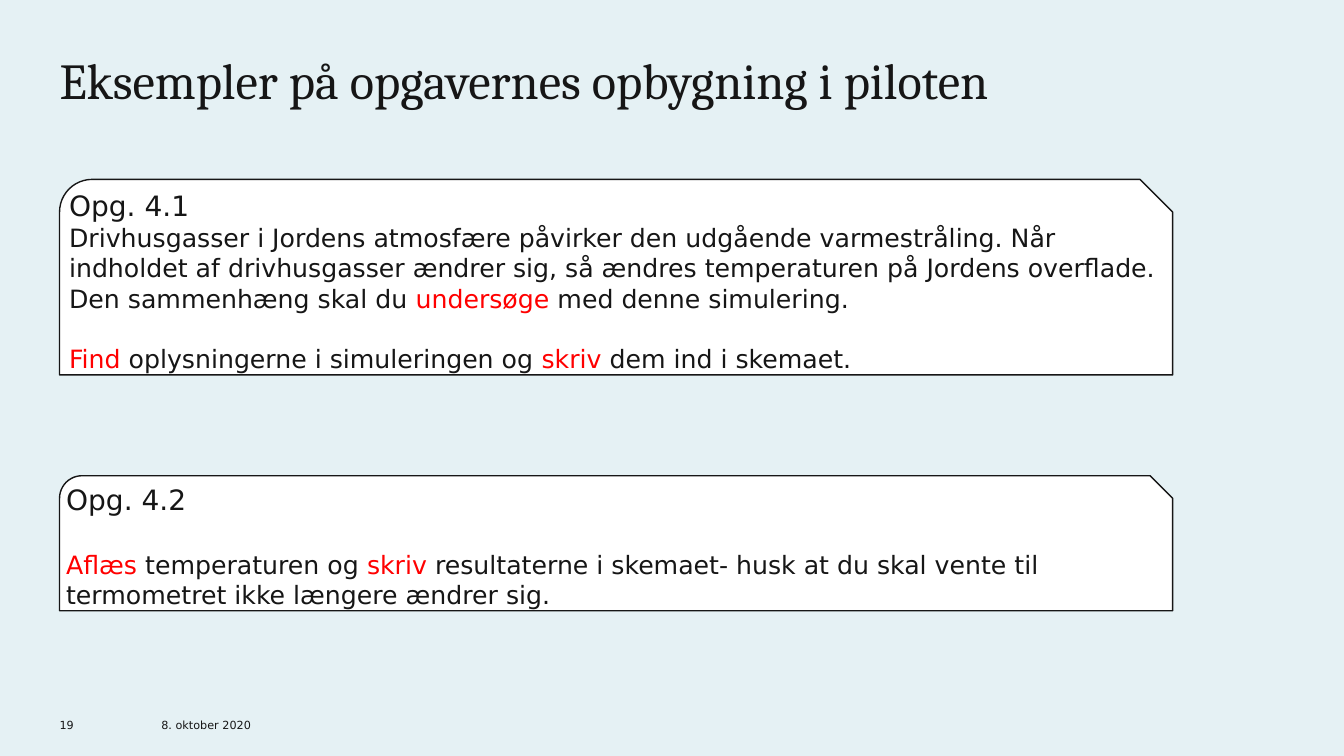
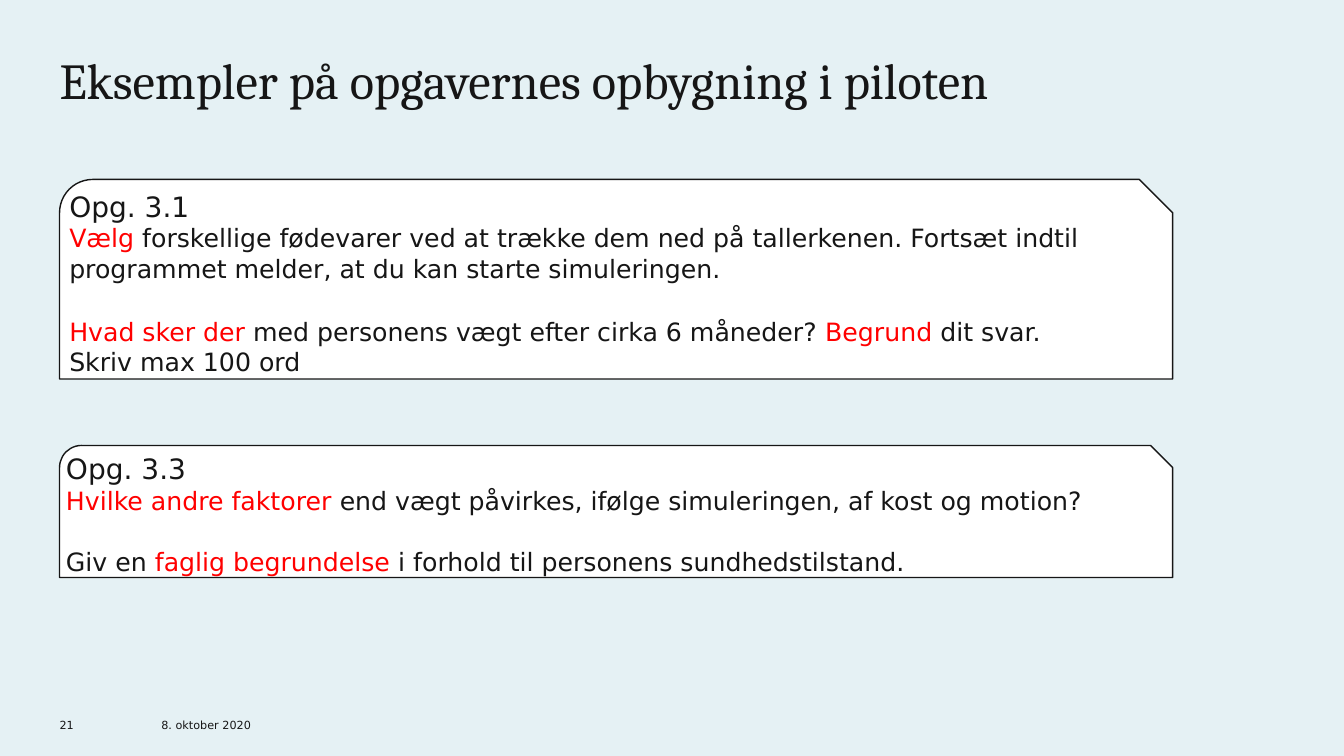
from dataclasses import dataclass

from pptx import Presentation
from pptx.dml.color import RGBColor
from pptx.enum.shapes import MSO_SHAPE
from pptx.enum.text import MSO_ANCHOR, PP_ALIGN
from pptx.util import Inches, Pt

TITLE = "Eksempler på opgavernes opbygning i piloten"
DATE = "8. oktober 2020"

SLIDES = [
    {
        "number": "19",
        "tasks": [
            {
                "top": 23.73,
                "height": 25.87,
                "heading": "Opg. 4.1",
                "lines": [
                    (0, "Drivhusgasser i Jordens atmosfære påvirker den udgående varmestråling. "
                        "Når indholdet af drivhusgasser ændrer sig, så ændres temperaturen på "
                        "Jordens overflade. Den sammenhæng skal du *undersøge* med denne simulering."),
                    (21.5, "*Find* oplysningerne i simuleringen og *skriv* dem ind i skemaet."),
                ],
            },
            {
                "top": 62.93,
                "height": 17.87,
                "heading": "Opg. 4.2",
                "lines": [
                    (23.5, "*Aflæs* temperaturen og *skriv* resultaterne i skemaet- husk at du skal "
                           "vente til termometret ikke længere ændrer sig."),
                ],
            },
        ],
    },
    {
        "number": "21",
        "tasks": [
            {
                "top": 23.73,
                "height": 26.4,
                "heading": "Opg. 3.1",
                "lines": [
                    (0, "*Vælg* forskellige fødevarer ved at trække dem ned på tallerkenen. "
                        "Fortsæt indtil programmet melder, at du kan starte simuleringen."),
                    (23.5, "*Hvad sker der *med personens vægt efter cirka 6 måneder? "
                           "*Begrund* dit svar."),
                    (0, "Skriv max 100 ord"),
                ],
            },
            {
                "top": 58.93,
                "height": 17.47,
                "heading": "Opg. 3.3",
                "lines": [
                    (0, "*Hvilke andre faktorer *end vægt påvirkes, ifølge simuleringen, "
                        "af kost og motion?"),
                    (21.5, "Giv en *faglig begrundelse* i forhold til personens sundhedstilstand."),
                ],
            },
        ],
    },
]


@dataclass(frozen=True)
class Theme:
    background: RGBColor = RGBColor(0xE5, 0xF1, 0xF4)
    ink: RGBColor = RGBColor(0x16, 0x16, 0x16)
    accent: RGBColor = RGBColor(0xFF, 0x00, 0x00)
    card: RGBColor = RGBColor(0xFF, 0xFF, 0xFF)
    title_font: str = "Cambria"
    body_font: str = "DejaVu Sans"
    title_size: int = 36
    heading_size: int = 20
    body_size: int = 18
    footer_size: int = 8


THEME = Theme()
WIDTH, HEIGHT = Inches(13.33), Inches(7.5)
MARGIN = 4.43
TITLE_AREA = (MARGIN, 7.87, 76, 13.6)
NUMBER_AREA = (MARGIN, 94.13, 2.25, 2.67)
DATE_AREA = (12, 94.13, 10.43, 2.67)
CARD_WIDTH = 82.82


def place(left, top, width, height):
    return [
        round(share * length / 100)
        for share, length in zip((left, top, width, height), (WIDTH, HEIGHT, WIDTH, HEIGHT))
    ]


def prepare_frame(shape, anchor=MSO_ANCHOR.TOP):
    frame = shape.text_frame
    frame.word_wrap = True
    frame.vertical_anchor = anchor
    frame.margin_left = frame.margin_top = frame.margin_right = frame.margin_bottom = 0
    return frame


def write(paragraph, text, size, font=THEME.body_font):
    paragraph.alignment = PP_ALIGN.LEFT
    paragraph.font.name = font
    paragraph.font.size = Pt(size)
    paragraph.font.color.rgb = THEME.ink
    for index, part in enumerate(text.split("*")):
        if part:
            run = paragraph.add_run()
            run.text = part
            if index % 2:
                run.font.color.rgb = THEME.accent


def add_label(slide, area, text, size, font=THEME.body_font, anchor=MSO_ANCHOR.TOP):
    frame = prepare_frame(slide.shapes.add_textbox(*place(*area)), anchor)
    paragraph = frame.paragraphs[0]
    write(paragraph, text, size, font)
    return paragraph


def add_task(slide, task):
    area = place(MARGIN, task["top"], CARD_WIDTH, task["height"])
    card = slide.shapes.add_shape(MSO_SHAPE.SNIP_ROUND_RECTANGLE, *area)
    card.shadow.inherit = False
    card.fill.solid()
    card.fill.fore_color.rgb = THEME.card
    card.line.color.rgb = THEME.ink
    card.line.width = Pt(1)
    frame = prepare_frame(card)
    write(frame.paragraphs[0], task["heading"], THEME.heading_size)
    for gap, text in task["lines"]:
        paragraph = frame.add_paragraph()
        if gap:
            paragraph.space_before = Pt(gap)
        write(paragraph, text, THEME.body_size)


def add_slide(presentation, content):
    slide = presentation.slides.add_slide(presentation.slide_layouts[6])
    title = add_label(slide, TITLE_AREA, TITLE, THEME.title_size, THEME.title_font)
    title.line_spacing = 0.83
    for area, text in ((DATE_AREA, DATE), (NUMBER_AREA, content["number"])):
        add_label(slide, area, text, THEME.footer_size, anchor=MSO_ANCHOR.BOTTOM)
    for task in content["tasks"]:
        add_task(slide, task)


def main():
    presentation = Presentation()
    presentation.slide_width, presentation.slide_height = WIDTH, HEIGHT
    background = presentation.slide_master.background.fill
    background.solid()
    background.fore_color.rgb = THEME.background
    for content in SLIDES:
        add_slide(presentation, content)
    presentation.save("out.pptx")


if __name__ == "__main__":
    main()
